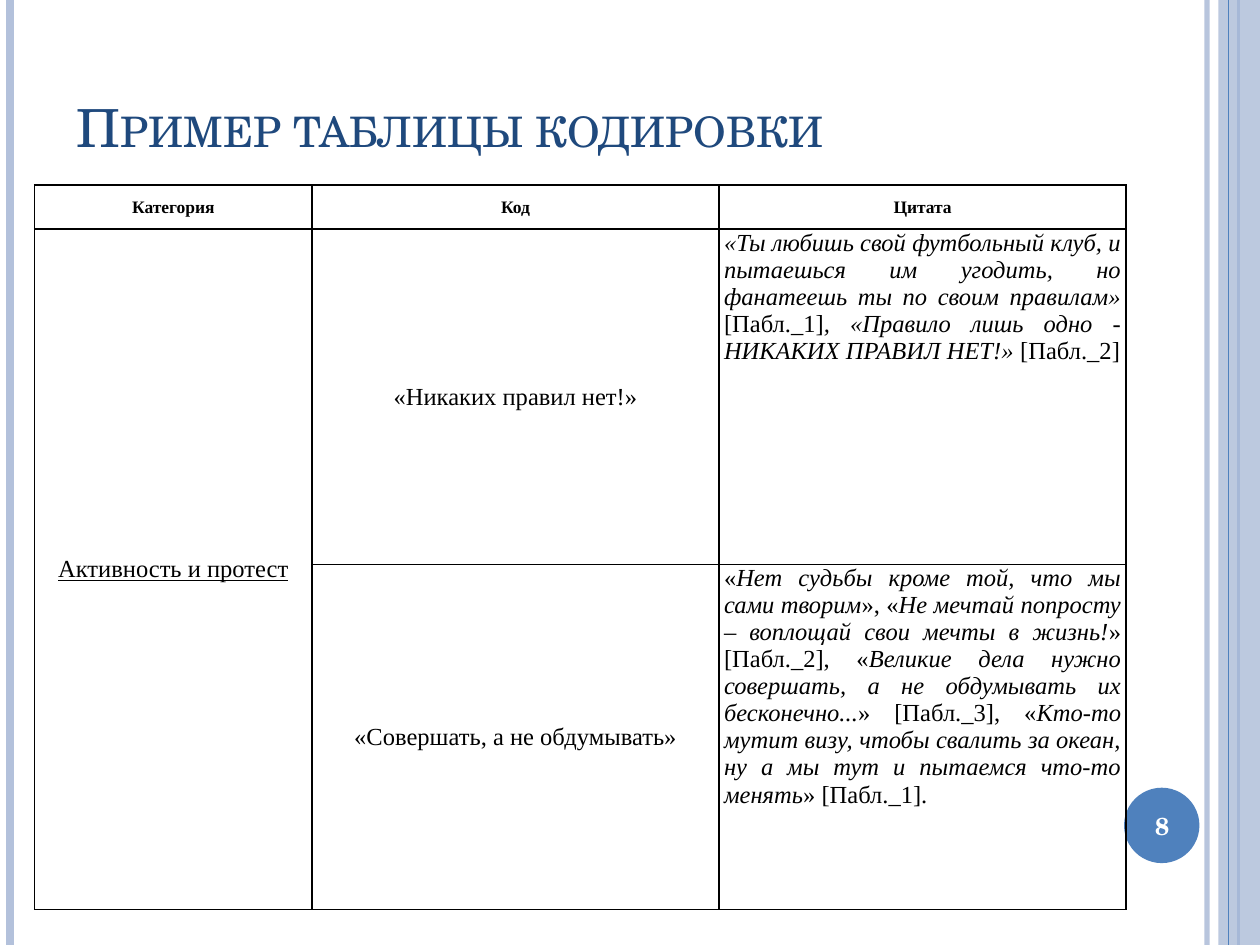
import lxml.etree
import pptx
import pptx.dml.color
import pptx.enum.shapes
import pptx.enum.text
import pptx.oxml
import pptx.oxml.ns
import pptx.util

Cm = pptx.util.Cm
ALIGN = pptx.enum.text.PP_ALIGN
ANCHOR = pptx.enum.text.MSO_ANCHOR
SHAPE = pptx.enum.shapes.MSO_SHAPE
HEADING_FONT = "TeX Gyre Schola"
TABLE_FONT = "Times New Roman"

HEADERS = ["Категория", "Код", "Цитата"]
CATEGORY = "Активность и протест"
CODED_QUOTES = [
    (
        "«Никаких правил нет!»",
        "*«Ты любишь свой футбольный клуб, и пытаешься им угодить, но фанатеешь "
        "ты по своим правилам» *[Пабл._1]*, «Правило лишь одно - НИКАКИХ ПРАВИЛ "
        "НЕТ!» *[Пабл._2]",
    ),
    (
        "«Совершать, а не обдумывать»",
        "«*Нет судьбы кроме той, что мы сами творим*», «*Не мечтай попросту – "
        "воплощай свои мечты в жизнь!*» [Пабл._2], «*Великие дела нужно совершать, "
        "а не обдумывать их бесконечно...*» [Пабл._3], «*Кто-то мутит визу, чтобы "
        "свалить за океан, ну а мы тут и пытаемся что-то менять*» [Пабл._1]. ",
    ),
]


def rgb(value):
    """Return the colour for a hex string."""
    return pptx.dml.color.RGBColor.from_string(value)


def add_alpha(fill_owner, percent):
    """Set the opacity of the solid colour inside an element."""
    color = next(fill_owner.iter(pptx.oxml.ns.qn("a:srgbClr")))
    alpha = lxml.etree.SubElement(color, pptx.oxml.ns.qn("a:alpha"))
    alpha.set("val", str(percent * 1000))


def write(frame, text, font=TABLE_FONT, size=14, color="000000", align=ALIGN.CENTER,
          anchor=ANCHOR.MIDDLE, bold=False, underline=False, small_caps=False):
    """Fill a text frame, with italics between asterisks."""
    frame.word_wrap = True
    frame.vertical_anchor = anchor
    paragraph = frame.paragraphs[0]
    paragraph.alignment = align
    for index, piece in enumerate(text.split("*")):
        if not piece:
            continue
        run = paragraph.add_run()
        run.text = piece
        run.font.name = font
        run.font.size = pptx.util.Pt(size)
        run.font.color.rgb = rgb(color)
        run.font.bold = bold
        run.font.underline = underline
        run.font.italic = index % 2 == 1
        if small_caps:
            run.font._element.set("cap", "small")


def add_block(slide, kind, left, top, width, height, color):
    """Add a plain filled shape."""
    block = slide.shapes.add_shape(kind, left, top, width, height)
    block.shadow.inherit = False
    block.fill.solid()
    block.fill.fore_color.rgb = rgb(color)
    block.line.fill.background()
    return block


def add_stripe(slide, x, top, height, color, weight):
    """Add a vertical line."""
    stripe = slide.shapes.add_connector(
        pptx.enum.shapes.MSO_CONNECTOR.STRAIGHT, x, top, x, top + height)
    stripe.line.color.rgb = rgb(color)
    stripe.line.width = pptx.util.Pt(weight)
    properties = stripe._element.spPr
    lxml.etree.SubElement(properties, pptx.oxml.ns.qn("a:effectLst"))
    return stripe


def add_side_bands(slide, left, top, width, height):
    """Draw the stripes along both edges of the box."""
    right = left + width
    pale = add_stripe(slide, right - Cm(1.07), top, height, "B3C1DB", 3)
    add_alpha(pale._element.spPr, 93)
    add_stripe(slide, left + Cm(0.2), top, height, "B3C1DB", 4.5)
    add_stripe(slide, right - Cm(0.43), top, height, "4F81BD", 1.5)
    band = add_block(slide, SHAPE.RECTANGLE, right - Cm(0.84), top, Cm(0.84), height, "B3C1DB")
    add_alpha(band._element.spPr, 87)
    add_stripe(slide, right - Cm(0.63), top, height, "4F81BD", 0.75)


def add_title(slide, left, top, width, height):
    """Write the slide title."""
    title = slide.shapes.add_textbox(left, top, width, height)
    write(title.text_frame, "Пример таблицы кодировки", font=HEADING_FONT, size=30,
          color="1F497D", align=ALIGN.LEFT, anchor=ANCHOR.BOTTOM, small_caps=True)


def style_cell(cell):
    """Clear the fill, set the margins and draw black borders."""
    cell.margin_left = cell.margin_right = Cm(0.1)
    cell.margin_top = cell.margin_bottom = 0
    properties = cell._tc.get_or_add_tcPr()
    for side in ("lnL", "lnR", "lnT", "lnB"):
        properties.append(pptx.oxml.parse_xml(
            f'<a:{side} {pptx.oxml.ns.nsdecls("a")} w="12700"><a:solidFill>'
            f'<a:srgbClr val="000000"/></a:solidFill></a:{side}>'))
    cell.fill.background()


def add_coding_table(slide, left, top, width, height):
    """Build the table of category, codes and quotes."""
    table = slide.shapes.add_table(3, 3, left, top, width, height).table
    category_width, header_height, first_quote_height = Cm(5.59), Cm(0.89), Cm(6.76)
    code_width = (width - category_width) // 2
    for column, size in zip(table.columns, (category_width, code_width, code_width)):
        column.width = size
    last_quote_height = height - header_height - first_quote_height
    for row, size in zip(table.rows, (header_height, first_quote_height, last_quote_height)):
        row.height = size
    for cell in table.iter_cells():
        style_cell(cell)
    for column, header in enumerate(HEADERS):
        write(table.cell(0, column).text_frame, header, size=10, bold=True)
        table.cell(0, column).vertical_anchor = ANCHOR.MIDDLE
    table.cell(1, 0).merge(table.cell(2, 0))
    write(table.cell(1, 0).text_frame, CATEGORY, underline=True)
    table.cell(1, 0).vertical_anchor = ANCHOR.MIDDLE
    for row, (code, quote) in enumerate(CODED_QUOTES, start=1):
        write(table.cell(row, 1).text_frame, code)
        table.cell(row, 1).vertical_anchor = ANCHOR.MIDDLE
        write(table.cell(row, 2).text_frame, quote, align=ALIGN.JUSTIFY, anchor=ANCHOR.TOP)
        table.cell(row, 2).vertical_anchor = ANCHOR.TOP


def add_page_number(slide, left, top, width, height):
    """Write the page number."""
    number = slide.shapes.add_textbox(left, top, width, height)
    write(number.text_frame, "8", font=HEADING_FONT, color="FFFFFF", bold=True)


def main():
    """Build and save the slide."""
    deck = pptx.Presentation()
    deck.slide_width, deck.slide_height = Cm(25.4), Cm(19.05)
    slide = deck.slides.add_slide(deck.slide_layouts[6])
    add_side_bands(slide, 0, 0, deck.slide_width, deck.slide_height)
    add_block(slide, SHAPE.OVAL, Cm(22.66), Cm(15.88), Cm(1.52), Cm(1.52), "4F81BD")
    add_title(slide, Cm(1.3), Cm(1.52), Cm(20.75), Cm(1.8))
    add_coding_table(slide, Cm(0.7), Cm(3.73), Cm(22), Cm(14.6))
    add_page_number(slide, Cm(22.58), Cm(15.93), Cm(1.7), Cm(1.45))
    deck.save("out.pptx")


if __name__ == "__main__":
    main()
